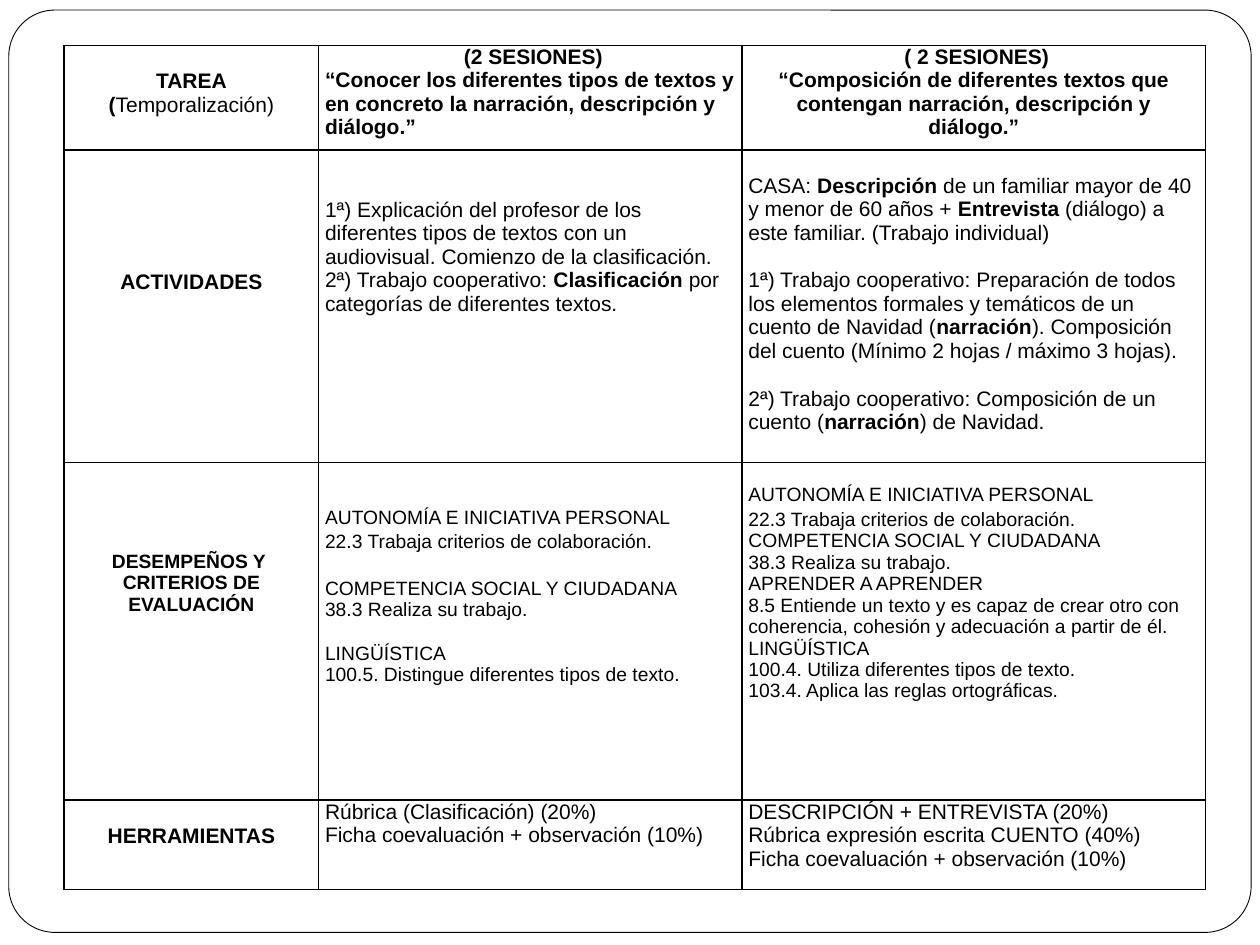
from lxml import etree
from pptx import Presentation
from pptx.dml.color import RGBColor
from pptx.enum.shapes import MSO_SHAPE
from pptx.enum.text import PP_ALIGN
from pptx.oxml.ns import qn
from pptx.util import Inches, Pt

ROUNDED = MSO_SHAPE.ROUNDED_RECTANGLE
THEME = {
    "font": "Arial",
    "ink": RGBColor(0, 0, 0),
    "paper": RGBColor(255, 255, 255),
    "body": 12,
    "small": 11,
    "frame_line": 0.5,
    "cell_line": 1,
}
LINE_HEIGHT = 1.15  # height of one line of text, as a share of the type size
BODY, SMALL = THEME["body"], THEME["small"]

LEFT = {"alignment": PP_ALIGN.LEFT}
CENTER = {"alignment": PP_ALIGN.CENTER}
JUSTIFY = {"alignment": PP_ALIGN.JUSTIFY}
LOOSE = {**JUSTIFY, "line_spacing": 1.15}
APART = {**LEFT, "space_before": Pt(BODY * LINE_HEIGHT)}
SMALL_APART = {"space_before": Pt(SMALL * LINE_HEIGHT)}
SMALL_APART_LOOSE = {"space_before": Pt(SMALL * LINE_HEIGHT * 1.15)}

COLUMN_WIDTHS = [2.02, 3.36, 3.68]
ROW_HEIGHTS = [0.83, 2.48, 2.68, 0.71]

# Each cell: lines left free above the text, type size, paragraphs.
# Bold text stands between double asterisks.
ROWS = [
    [
        (1, BODY, [("**TAREA**", CENTER), ("**(**Temporalización)", CENTER)]),
        (0, BODY, [
            ("** (2 SESIONES)**", CENTER),
            ("**“Conocer los diferentes tipos de textos y en concreto la "
             "narración, descripción y diálogo.”**", LEFT),
        ]),
        (0, BODY, [
            ("** ( 2 SESIONES)**", CENTER),
            ("**“Composición de diferentes textos que contengan narración, "
             "descripción y diálogo.”**", CENTER),
        ]),
    ],
    [
        (5, BODY, [("**ACTIVIDADES**", CENTER)]),
        (2, BODY, [
            ("1ª) Explicación del profesor de los diferentes tipos de textos "
             "con un audiovisual. Comienzo de la clasificación.", LEFT),
            ("2ª) Trabajo cooperativo: **Clasificación** por categorías de "
             "diferentes textos.", LEFT),
        ]),
        (1, BODY, [
            ("CASA: **Descripción** de un familiar mayor de 40 y menor de 60 "
             "años + **Entrevista** (diálogo) a este familiar. "
             "(Trabajo individual)", LEFT),
            ("1ª) Trabajo cooperativo: Preparación de todos los elementos "
             "formales y temáticos de un cuento de Navidad (**narración**). "
             "Composición del cuento (Mínimo 2 hojas / máximo 3 hojas).", APART),
            ("2ª) Trabajo cooperativo: Composición de un cuento "
             "(**narración**) de Navidad.", APART),
        ]),
    ],
    [
        (4, SMALL, [("**DESEMPEÑOS Y **", CENTER),
                    ("**CRITERIOS DE EVALUACIÓN**", CENTER)]),
        (2, SMALL, [
            ("AUTONOMÍA E INICIATIVA PERSONAL", JUSTIFY),
            ("22.3 Trabaja criterios de colaboración.", LOOSE),
            ("COMPETENCIA SOCIAL Y CIUDADANA", {**LEFT, **SMALL_APART_LOOSE}),
            ("38.3 Realiza su trabajo.", JUSTIFY),
            ("LINGÜÍSTICA", {**JUSTIFY, **SMALL_APART}),
            ("100.5. Distingue diferentes tipos de texto.", LEFT),
        ]),
        (1, SMALL, [
            ("AUTONOMÍA E INICIATIVA PERSONAL", JUSTIFY),
            ("22.3 Trabaja criterios de colaboración.", LOOSE),
            ("COMPETENCIA SOCIAL Y CIUDADANA", LEFT),
            ("38.3 Realiza su trabajo.", LEFT),
            ("APRENDER A APRENDER", LEFT),
            ("8.5 Entiende un texto y es capaz de crear otro con coherencia, "
             "cohesión y adecuación a partir de él.", LEFT),
            ("LINGÜÍSTICA", JUSTIFY),
            ("100.4. Utiliza diferentes tipos de texto.", LEFT),
            ("103.4. Aplica las reglas ortográficas.", LEFT),
        ]),
    ],
    [
        (1, BODY, [("**HERRAMIENTAS**", CENTER)]),
        (0, BODY, [
            ("Rúbrica (Clasificación) (20%)", LEFT),
            ("Ficha coevaluación + observación (10%)", LEFT),
        ]),
        (0, BODY, [
            ("DESCRIPCIÓN + ENTREVISTA (20%)", LEFT),
            ("Rúbrica expresión escrita CUENTO (40%)", LEFT),
            ("Ficha coevaluación + observación (10%)", LEFT),
        ]),
    ],
]


def draw_borders(cell):
    properties = cell._tc.get_or_add_tcPr()
    for position, side in enumerate(("a:lnL", "a:lnR", "a:lnT", "a:lnB")):
        line = etree.Element(qn(side), w=str(Pt(THEME["cell_line"])))
        fill = etree.SubElement(line, qn("a:solidFill"))
        etree.SubElement(fill, qn("a:srgbClr"), val=str(THEME["ink"]))
        properties.insert(position, line)


def write_paragraph(para, text, size, formats):
    for name, value in formats.items():
        setattr(para, name, value)
    for index, part in enumerate(text.split("**")):
        if part:
            span = para.add_run()
            span.text = part
            span.font.color.rgb = THEME["ink"]
            font_formats = {"name": THEME["font"], "size": Pt(size),
                            "bold": index % 2 == 1}
            for name, value in font_formats.items():
                setattr(span.font, name, value)


deck = Presentation()
deck.slide_width, deck.slide_height = Inches(10), Inches(7.5)
page = deck.slides.add_slide(deck.slide_layouts[6])

frame = page.shapes.add_shape(
    ROUNDED, Inches(0.07), Inches(0.08), Inches(9.86), Inches(7.32))
frame.adjustments[0] = 0.05
frame.shadow.inherit = False
frame.fill.solid()
frame.fill.fore_color.rgb = THEME["paper"]
frame.line.color.rgb = THEME["ink"]
frame.line.width = Pt(THEME["frame_line"])

table = page.shapes.add_table(
    len(ROW_HEIGHTS), len(COLUMN_WIDTHS), Inches(0.51), Inches(0.36),
    Inches(sum(COLUMN_WIDTHS)), Inches(sum(ROW_HEIGHTS))).table
table.first_row = table.horz_banding = False
for column, width in zip(table.columns, COLUMN_WIDTHS):
    column.width = Inches(width)
for row, height in zip(table.rows, ROW_HEIGHTS):
    row.height = Inches(height)

for row, contents in zip(table.rows, ROWS):
    for cell, (free_lines, size, paragraphs) in zip(row.cells, contents):
        cell.fill.solid()
        cell.fill.fore_color.rgb = THEME["paper"]
        draw_borders(cell)
        margins = {
            "margin_left": Inches(0.05),
            "margin_right": Inches(0.05),
            "margin_top": Pt(free_lines * size * LINE_HEIGHT),
            "margin_bottom": 0,
        }
        for name, value in margins.items():
            setattr(cell, name, value)
        box = cell.text_frame
        for index, (text, formats) in enumerate(paragraphs):
            para = box.add_paragraph() if index else box.paragraphs[0]
            write_paragraph(para, text, size, formats)

deck.save("out.pptx")
